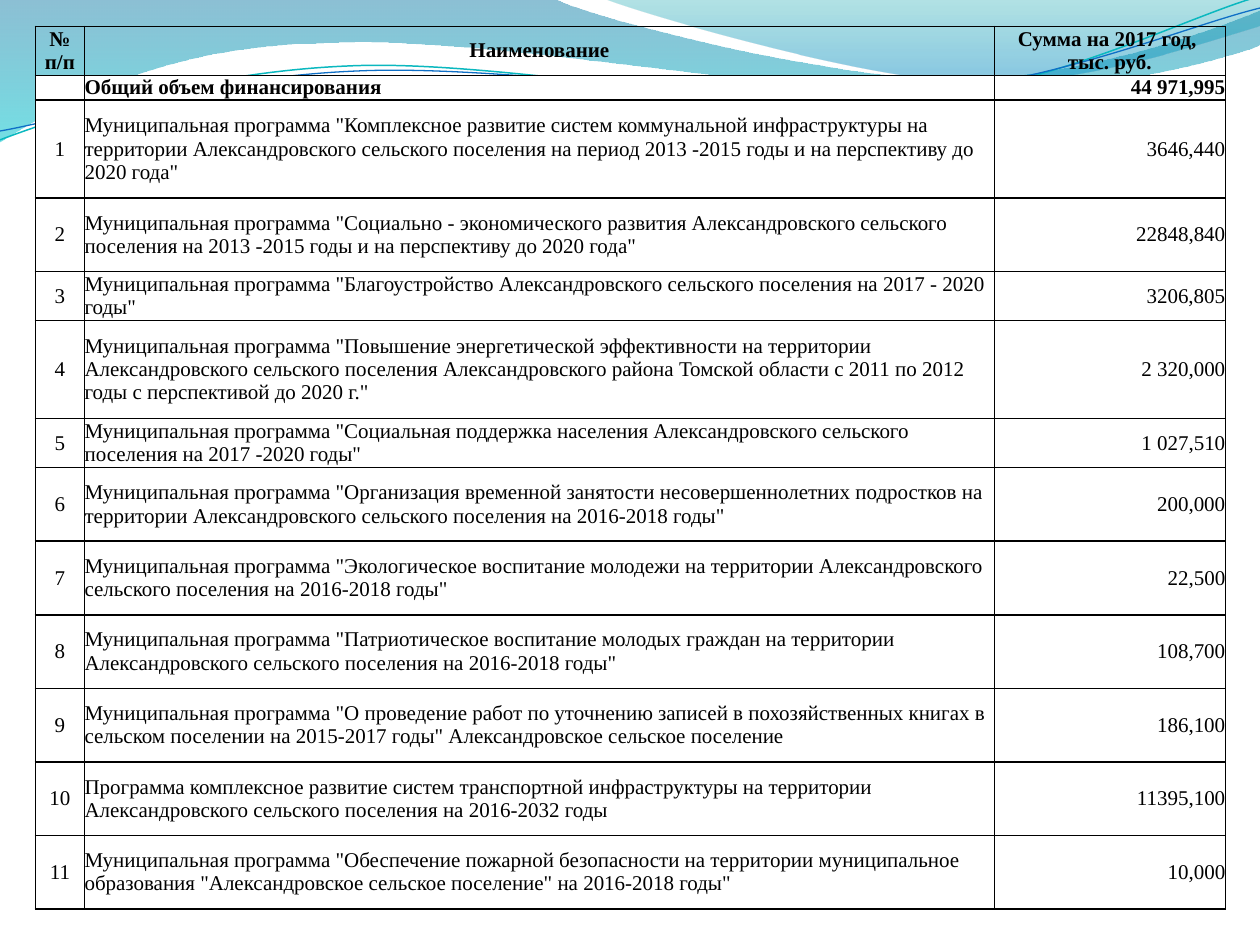
from math import cos, radians, sin
from typing import NamedTuple

from lxml import etree
from pptx import Presentation
from pptx.dml.color import RGBColor
from pptx.enum.text import MSO_ANCHOR, PP_ALIGN
from pptx.oxml.ns import qn
from pptx.util import Pt

LEFT, CENTER, RIGHT = PP_ALIGN.LEFT, PP_ALIGN.CENTER, PP_ALIGN.RIGHT
MIDDLE = MSO_ANCHOR.MIDDLE

PX = 914400 / 126
FONT = "Times New Roman"
FONT_SIZE = Pt(12)
BORDER = Pt(1)

BLACK = RGBColor(0x00, 0x00, 0x00)
WHITE = RGBColor(0xFF, 0xFF, 0xFF)
BLUE = RGBColor(0x00, 0x74, 0xA1)
CYAN = RGBColor(0x00, 0xC6, 0xCF)
TEAL = RGBColor(0x00, 0xA1, 0xA9)
SKY = RGBColor(0x00, 0x8B, 0xBF)
LINE_TEAL = RGBColor(0x0A, 0xB8, 0xBF)
LINE_BLUE = RGBColor(0x0F, 0x6F, 0xC6)

Point = tuple[float, float]


class Stop(NamedTuple):
    position: float
    color: RGBColor
    alpha: int


class Wave(NamedTuple):
    """A path in px: a segment of one point is straight, of three points a Bézier curve."""
    start: Point
    segments: list[list[Point]]
    stops: tuple[Stop, ...] = ()
    line: RGBColor | None = None
    width: float = 0
    center: Point = (0, 0)
    rotation: float = 0


class Row(NamedTuple):
    lines: int
    number: str
    name: str
    amount: str


WAVES = [
    Wave((-1, -1), [
        [(554, -1)],
        [(600, 21), (837, 79), (955, 79)],
        [(1074, 79), (1207, 33), (1260, 11)],
        [(1261, 45)],
        [(1239, 55), (1096, 96), (940, 94)],
        [(784, 94), (481, 35), (324, 43)],
        [(163, 45), (58, 105), (-1, 142)],
    ], stops=(Stop(0, BLUE, 45), Stop(1, CYAN, 55))),
    Wave((604, -1), [
        [(641, 14), (859, 78), (969, 82)],
        [(1079, 87), (1211, 40), (1260, 26)],
        [(1260, 0)],
    ], stops=(Stop(0, TEAL, 30), Stop(0.8, SKY, 45))),
    Wave((0, 140), [
        [(60, 117), (199, 72), (349, 66)],
        [(498, 59), (747, 112), (898, 101)],
        [(1050, 89), (1182, 19), (1257, -3)],
    ], line=LINE_TEAL, width=0.85, center=(629, 72), rotation=357.3),
    Wave((0, 131), [
        [(59, 121), (207, 77), (357, 71)],
        [(508, 64), (752, 106), (903, 95)],
        [(1053, 84), (1186, 26), (1260, 8)],
    ], line=LINE_BLUE, width=0.75, center=(629, 74), rotation=357.3),
]

TABLE_LEFT, TABLE_TOP, TABLE_HEIGHT = 35.3, 26.4, 883
COLUMN_WIDTHS = (49.3, 909.8, 231)
ALIGNMENTS = (CENTER, LEFT, RIGHT)

ROWS = [
    Row(2, "№ п/п", "Наименование", "Сумма на 2017 год, \nтыс. руб."),
    Row(1, "", "Общий объем финансирования", "44 971,995"),
    Row(4, "1", 'Муниципальная программа "Комплексное развитие систем коммунальной инфраструктуры на территории Александровского сельского поселения на период 2013 -2015 годы и на перспективу до 2020 года"', "3646,440"),
    Row(3, "2", 'Муниципальная программа "Социально - экономического развития Александровского сельского поселения на 2013 -2015 годы и на перспективу до 2020 года"', "22848,840"),
    Row(2, "3", 'Муниципальная программа "Благоустройство Александровского сельского поселения на 2017 - 2020 годы"', "3206,805"),
    Row(4, "4", 'Муниципальная программа "Повышение энергетической эффективности на территории Александровского сельского поселения Александровского района Томской области с 2011 по 2012 годы с перспективой до 2020 г."', "2 320,000"),
    Row(2, "5", 'Муниципальная программа "Социальная поддержка населения Александровского сельского поселения на 2017 -2020 годы"', "1 027,510"),
    Row(3, "6", 'Муниципальная программа "Организация временной занятости несовершеннолетних подростков на территории Александровского сельского поселения на 2016-2018 годы"', "200,000"),
    Row(3, "7", 'Муниципальная программа "Экологическое воспитание молодежи на территории Александровского сельского поселения на 2016-2018 годы"', "22,500"),
    Row(3, "8", 'Муниципальная программа "Патриотическое воспитание молодых граждан на территории Александровского сельского поселения на 2016-2018 годы"', "108,700"),
    Row(3, "9", 'Муниципальная программа "О проведение работ по уточнению записей в похозяйственных книгах в сельском поселении на 2015-2017 годы" Александровское сельское поселение', "186,100"),
    Row(3, "10", "Программа комплексное развитие систем транспортной инфраструктуры на территории Александровского сельского поселения на 2016-2032 годы", "11395,100"),
    Row(3, "11", 'Муниципальная программа "Обеспечение пожарной безопасности на территории муниципальное образования "Александровское сельское поселение" на 2016-2018 годы"', "10,000"),
]


def px(value: float) -> int:
    return round(value * PX)


def unrotated(point: Point, wave: Wave) -> Point:
    """Give the place, in EMU, that the wave's rotation brings to the point."""
    angle = radians(-wave.rotation)
    dx, dy = point[0] - wave.center[0], point[1] - wave.center[1]
    return (px(wave.center[0] + dx * cos(angle) - dy * sin(angle)),
            px(wave.center[1] + dx * sin(angle) + dy * cos(angle)))


def bend(s, segments: list[list[Point]]) -> None:
    """Join each three straight steps of a curved segment into one Bézier curve."""
    steps = iter(list(s._element.iter(qn("a:lnTo"))))
    for segment in segments:
        first, *others = [next(steps) for _ in segment]
        if others:
            first.tag = qn("a:cubicBezTo")
            for step in others:
                first.append(step[0])
                step.getparent().remove(step)


def fill_gradient(fill, stops: tuple[Stop, ...]) -> None:
    """Fill from top to bottom with translucent stops."""
    fill.gradient()
    fill.gradient_angle = 270
    for gradient_stop, stop in zip(fill.gradient_stops, stops):
        gradient_stop.position = stop.position
        gradient_stop.color.rgb = stop.color
        color = gradient_stop._gs.find(qn("a:srgbClr"))
        etree.SubElement(color, qn("a:alpha"), val=str(stop.alpha * 1000))


def draw_wave(slide, wave: Wave) -> None:
    builder = slide.shapes.build_freeform(*unrotated(wave.start, wave))
    points = [unrotated(point, wave) for segment in wave.segments for point in segment]
    builder.add_line_segments(points, close=bool(wave.stops))
    s = builder.convert_to_shape()
    bend(s, wave.segments)
    s.rotation = wave.rotation
    s.shadow.inherit = False
    if wave.stops:
        fill_gradient(s.fill, wave.stops)
        s.line.fill.background()
    else:
        s.fill.background()
        s.line.color.rgb = wave.line
        s.line.width = Pt(wave.width)


def add_borders(cell) -> None:
    tc_pr = cell._tc.get_or_add_tcPr()
    for side in ("lnL", "lnR", "lnT", "lnB"):
        ln = etree.SubElement(tc_pr, qn(f"a:{side}"), w=str(BORDER))
        fill = etree.SubElement(ln, qn("a:solidFill"))
        etree.SubElement(fill, qn("a:srgbClr"), val=str(BLACK))


def fill_cell(cell, text: str, align: PP_ALIGN, bold: bool, header: bool) -> None:
    cell.margin_left = cell.margin_right = cell.margin_top = cell.margin_bottom = 0
    cell.vertical_anchor = MIDDLE
    add_borders(cell)
    if header:
        cell.fill.background()
    else:
        cell.fill.solid()
        cell.fill.fore_color.rgb = WHITE
    cell.text = text
    for p in cell.text_frame.paragraphs:
        p.alignment = align
        p.font.name = FONT
        p.font.size = FONT_SIZE
        p.font.bold = bold
        p.font.color.rgb = BLACK
        if not text:
            # An empty paragraph takes its height from its end mark.
            etree.SubElement(p._p, qn("a:endParaRPr"), sz=str(int(FONT_SIZE.pt * 100)))


def draw_table(slide) -> None:
    frame = slide.shapes.add_table(len(ROWS), len(COLUMN_WIDTHS), px(TABLE_LEFT), px(TABLE_TOP),
                                   px(sum(COLUMN_WIDTHS)), px(TABLE_HEIGHT))
    table = frame.table
    table.first_row = table.horz_banding = False
    for column, width in zip(table.columns, COLUMN_WIDTHS):
        column.width = px(width)
    line_height = TABLE_HEIGHT / sum(row.lines for row in ROWS)
    for i, row in enumerate(ROWS):
        table.rows[i].height = px(row.lines * line_height)
        texts = (row.number, row.name, row.amount)
        for j, (text, align) in enumerate(zip(texts, ALIGNMENTS)):
            header = i == 0
            fill_cell(table.cell(i, j), text, CENTER if header else align, i < 2, header)


def main() -> None:
    prs = Presentation()
    prs.slide_width, prs.slide_height = px(1260), px(945)
    slide = prs.slides.add_slide(prs.slide_layouts[6])
    for wave in WAVES:
        draw_wave(slide, wave)
    draw_table(slide)
    prs.save("out.pptx")


if __name__ == "__main__":
    main()
